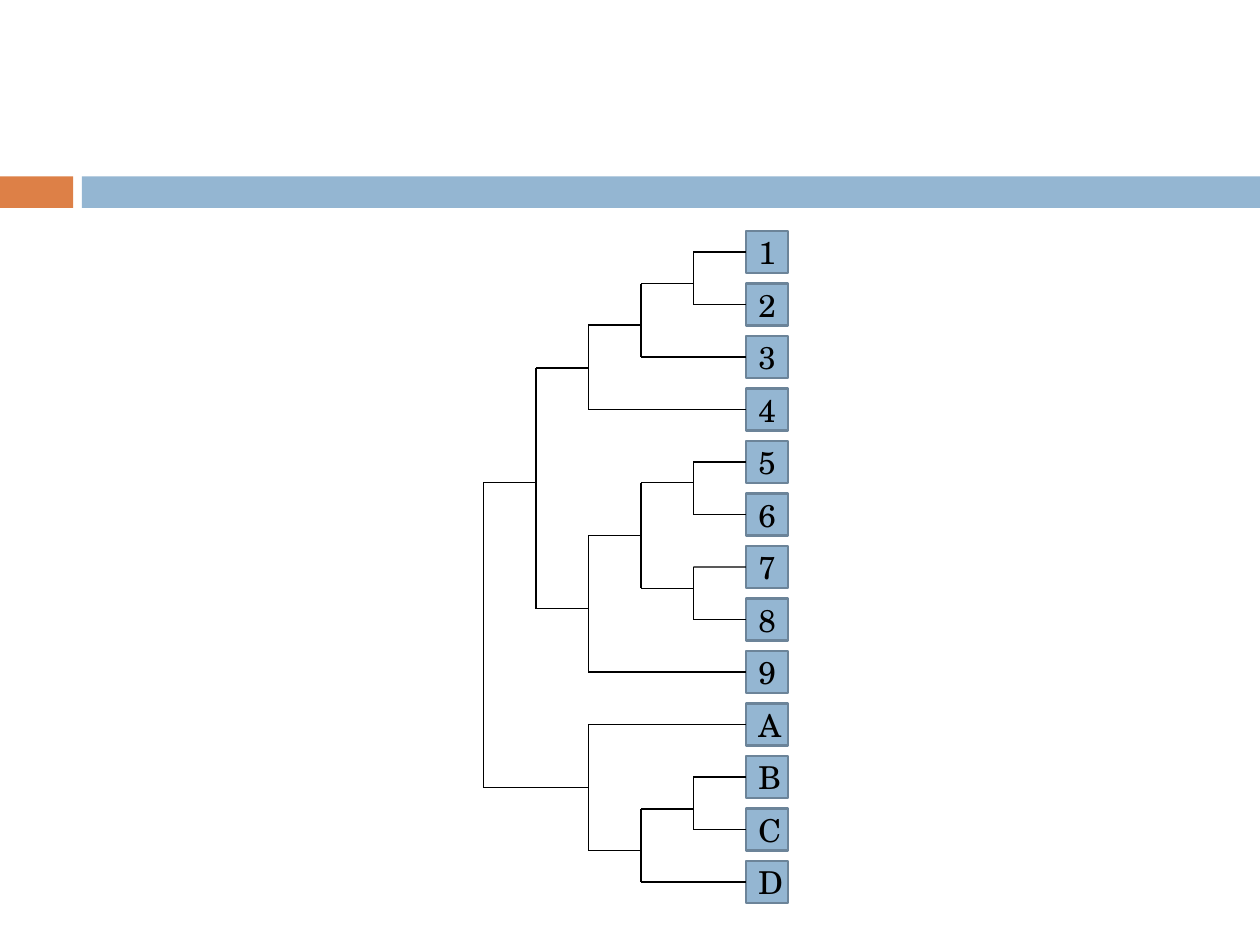
from dataclasses import dataclass
from typing import Optional

from pptx import Presentation
from pptx.dml.color import RGBColor
from pptx.enum.shapes import MSO_CONNECTOR, MSO_SHAPE
from pptx.enum.text import MSO_ANCHOR, PP_ALIGN
from pptx.oxml.xmlchemy import OxmlElement
from pptx.shapes.autoshape import Shape
from pptx.slide import Slide
from pptx.util import Inches, Pt

ORANGE = RGBColor(0xDD, 0x80, 0x47)
BLUE = RGBColor(0x94, 0xB6, 0xD2)
SLATE = RGBColor(0x6C, 0x84, 0x99)
BLACK = RGBColor(0, 0, 0)
FONT = "TeX Gyre Schola"

LABELS = "123456789ABCD"
STEP = 5 / 12
BOX_SIZE = 1 / 3
BOX_LEFT = 5.92
FIRST_CENTER = 2.0
LEFT_SIDE = 1


@dataclass
class Node:
    x: float
    y: float
    box: Optional[Shape] = None


@dataclass
class Merge:
    name: str
    upper: str
    lower: str
    level: int
    stem_y: float


MERGES = [
    Merge("12", "1", "2", 1, 2.25),
    Merge("56", "5", "6", 1, 3.83),
    Merge("78", "7", "8", 1, 4.67),
    Merge("BC", "B", "C", 1, 6.42),
    Merge("123", "12", "3", 2, 2.58),
    Merge("5678", "56", "78", 2, 4.25),
    Merge("BCD", "BC", "D", 2, 6.75),
    Merge("1234", "123", "4", 3, 2.92),
    Merge("56789", "5678", "9", 3, 4.83),
    Merge("ABCD", "A", "BCD", 3, 6.25),
    Merge("1-9", "1234", "56789", 4, 3.83),
    Merge("root", "1-9", "ABCD", 5, 5.04),
]


def add_rectangle(slide: Slide, left: float, top: float, width: float,
                  height: float, color: RGBColor) -> Shape:
    shape = slide.shapes.add_shape(
        MSO_SHAPE.RECTANGLE, Inches(left), Inches(top), Inches(width), Inches(height))
    shape.shadow.inherit = False
    shape.fill.solid()
    shape.fill.fore_color.rgb = color
    shape.line.fill.background()
    return shape


def add_leaf(slide: Slide, label: str, center_y: float) -> Node:
    box = add_rectangle(slide, BOX_LEFT, center_y - BOX_SIZE / 2, BOX_SIZE, BOX_SIZE, BLUE)
    box.line.color.rgb = SLATE
    box.line.width = Pt(1.5)
    text_frame = box.text_frame
    text_frame.text = label
    text_frame.vertical_anchor = MSO_ANCHOR.MIDDLE
    paragraph = text_frame.paragraphs[0]
    paragraph.alignment = PP_ALIGN.CENTER
    font = paragraph.runs[0].font
    font.name = FONT
    font.size = Pt(18)
    font.color.rgb = BLACK
    return Node(BOX_LEFT, center_y, box)


def add_branch(slide: Slide, start: Node, end_x: float, end_y: float) -> None:
    connector = slide.shapes.add_connector(
        MSO_CONNECTOR.STRAIGHT, Inches(start.x), Inches(start.y), Inches(end_x), Inches(end_y))
    connector.line.color.rgb = BLACK
    connector.line.width = Pt(0.79)
    connector._element.spPr.append(OxmlElement("a:effectLst"))
    if start.box is not None:
        connector.begin_connect(start.box, LEFT_SIDE)


def add_merge(slide: Slide, merge: Merge, nodes: dict[str, Node]) -> Node:
    x = BOX_LEFT - merge.level * STEP
    upper, lower = nodes[merge.upper], nodes[merge.lower]
    add_branch(slide, upper, x, upper.y)
    add_branch(slide, Node(x, upper.y), x, lower.y)
    add_branch(slide, lower, x, lower.y)
    return Node(x, merge.stem_y)


def main() -> None:
    presentation = Presentation()
    presentation.slide_width = Inches(10)
    presentation.slide_height = Inches(7.5)
    slide = presentation.slides.add_slide(presentation.slide_layouts[6])

    add_rectangle(slide, 0, 1.4, 0.58, 0.25, ORANGE)
    add_rectangle(slide, 0.65, 1.4, 9.35, 0.25, BLUE)
    nodes = {label: add_leaf(slide, label, FIRST_CENTER + row * STEP)
             for row, label in enumerate(LABELS)}
    for merge in MERGES:
        nodes[merge.name] = add_merge(slide, merge, nodes)

    presentation.save("out.pptx")


if __name__ == "__main__":
    main()
